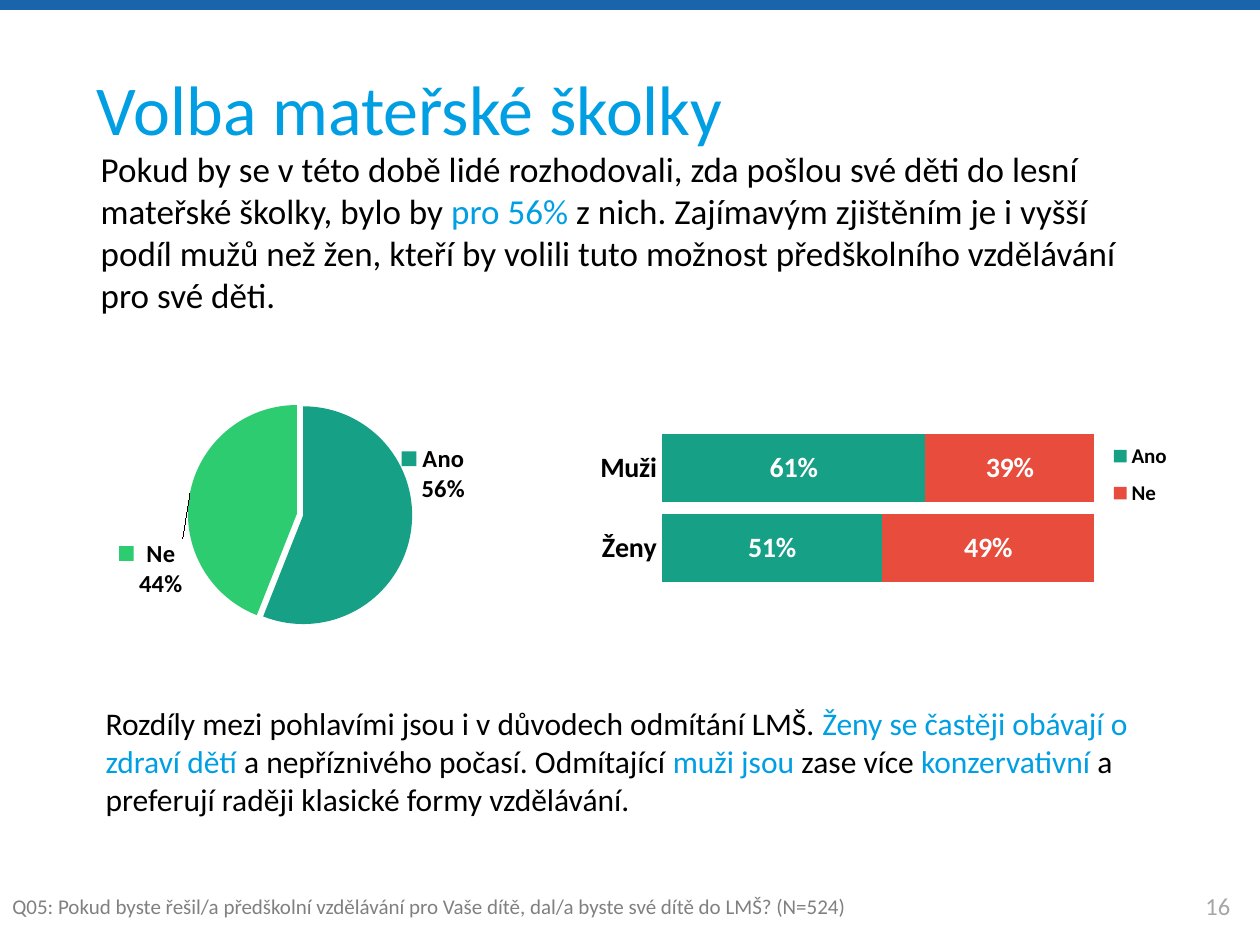
from lxml import etree
from pptx import Presentation
from pptx import util as u
from pptx.chart import data as cd
from pptx.dml.color import RGBColor
from pptx.enum import chart as ce, shapes, text
from pptx.oxml import ns

NAVY = RGBColor(0x19, 0x64, 0xAA)
BLUE = RGBColor(0x00, 0x9F, 0xE3)
BLACK = RGBColor(0x00, 0x00, 0x00)
WHITE = RGBColor(0xFF, 0xFF, 0xFF)
GRAY = RGBColor(0x80, 0x80, 0x80)
PALE = RGBColor(0xA6, 0xA6, 0xA6)
TEAL = RGBColor(0x16, 0xA0, 0x85)
GREEN = RGBColor(0x2E, 0xCC, 0x71)
RED = RGBColor(0xE7, 0x4C, 0x3C)


def sub(node, tag, val=None):
    child = etree.SubElement(node, ns.qn(tag))
    if val is not None:
        child.set("val", str(val))
    return child


def place(node, index, spot, inner=False, edge=True):
    for old in node.findall(ns.qn("c:layout")):
        node.remove(old)
    layout = etree.Element(ns.qn("c:layout"))
    manual = sub(layout, "c:manualLayout")
    if inner:
        sub(manual, "c:layoutTarget", "inner")
    if edge:
        sub(manual, "c:xMode", "edge")
        sub(manual, "c:yMode", "edge")
    for key, val in zip("xywh", spot):
        sub(manual, f"c:{key}", val)
    node.insert(index, layout)


class Deck:
    """Hold the text style and the current slide, and add elements to it."""

    def __init__(self, prs, face):
        self.face = face
        self.slide = prs.slides.add_slide(prs.slide_layouts[5])

    def style(self, font, size, color, bold=False):
        font.name, font.size, font.bold = self.face, u.Pt(size), bold
        font.color.rgb = color

    def title(self, words, box, size):
        head = self.slide.shapes.title
        head.left, head.top, head.width, head.height = map(u.Cm, box)
        frame = head.text_frame
        frame.text = words
        frame.vertical_anchor = text.MSO_ANCHOR.MIDDLE
        para = frame.paragraphs[0]
        para.alignment = text.PP_ALIGN.LEFT
        self.style(para.runs[0].font, size, BLUE)

    def band(self, box, color):
        rect = self.slide.shapes.add_shape(shapes.MSO_SHAPE.RECTANGLE, *map(u.Cm, box))
        rect.shadow.inherit = False
        rect.fill.solid()
        rect.fill.fore_color.rgb = color
        rect.line.fill.background()

    def label(self, words, box, size, color, align=text.PP_ALIGN.LEFT):
        frame = self.slide.shapes.add_textbox(*map(u.Cm, box)).text_frame
        frame.word_wrap = True
        frame.vertical_anchor = text.MSO_ANCHOR.MIDDLE
        frame.text = words
        para = frame.paragraphs[0]
        para.alignment = align
        self.style(para.runs[0].font, size, color)

    def prose(self, parts, box, size):
        """Add a paragraph whose every second part is highlighted."""
        frame = self.slide.shapes.add_textbox(*map(u.Cm, box)).text_frame
        frame.word_wrap = True
        frame.auto_size = text.MSO_AUTO_SIZE.SHAPE_TO_FIT_TEXT
        para = frame.paragraphs[0]
        para.space_after = u.Pt(6)
        for i, part in enumerate(parts):
            run = para.add_run()
            run.text = part
            self.style(run.font, size, BLUE if i % 2 else BLACK)

    def chart(self, kind, cats, rows, box, spot, fmt):
        data = cd.CategoryChartData(number_format=fmt)
        data.categories = cats
        for name, vals in rows:
            data.add_series(name, vals)
        chart = self.slide.shapes.add_chart(kind, *map(u.Cm, box), data).chart
        self.style(chart.font, 18, BLACK)
        chart.has_title = chart.has_legend = False
        place(chart.element.xpath(".//c:plotArea")[0], 0, spot, inner=True)
        return chart

    def bars(self, cats, rows, colors, box, spot, key):
        chart = self.chart(ce.XL_CHART_TYPE.BAR_STACKED_100, cats, rows, box, spot, "0%")
        plot = chart.plots[0]
        plot.gap_width, plot.overlap = 19, 100
        plot.vary_by_categories = False
        for row, color in zip(plot.series, colors):
            row.format.fill.solid()
            row.format.fill.fore_color.rgb = color
            marks = row.data_labels
            marks.show_value = True
            marks.number_format, marks.number_format_is_linked = "0%", False
            self.style(marks.font, 16, WHITE, True)
        axis = chart.category_axis
        axis.major_tick_mark = ce.XL_TICK_MARK.NONE
        axis.format.line.fill.background()
        self.style(axis.tick_labels.font, 16, BLACK, True)
        chart.value_axis.has_major_gridlines = False
        chart.value_axis.visible = False
        chart.has_legend = True
        chart.legend.position = ce.XL_LEGEND_POSITION.RIGHT
        chart.legend.include_in_layout = False
        self.style(chart.legend.font, 12, BLACK, True)
        place(chart.element.xpath(".//c:legend")[0], 1, key)

    def pie(self, cats, rows, colors, box, spot, shifts):
        chart = self.chart(ce.XL_CHART_TYPE.PIE, cats, rows, box, spot, "0")
        plot = chart.plots[0]
        plot.vary_by_categories = True
        row = plot.series[0]
        for i, color in enumerate(colors):
            point = row.points[i]
            point.format.fill.solid()
            point.format.fill.fore_color.rgb = color
            self.style(point.data_label.font, 14, BLACK, True)
            point.data_label.position = ce.XL_LABEL_POSITION.OUTSIDE_END
        blast = etree.Element(ns.qn("c:explosion"), val="3")
        chart.element.xpath(".//c:ser/c:dPt")[0].addprevious(blast)
        shown = {"LegendKey": 1, "Val": 0, "CatName": 1, "SerName": 0, "Percent": 1}
        for mark, shift in zip(chart.element.xpath(".//c:dLbl"), shifts):
            place(mark, 1, shift, edge=False)
            for name, val in shown.items():
                mark.find(ns.qn(f"c:show{name}")).set("val", str(val))
            sub(mark, "c:separator").text = "\n"


def main():
    prs = Presentation()
    prs.slide_width, prs.slide_height = u.Cm(25.4), u.Cm(19.05)
    deck = Deck(prs, "Calibri")
    deck.band((0, 0, 25.4, 0.2), NAVY)
    deck.title("Volba mateřské školky", (1.7, 1.02, 22, 2.31), 40)
    deck.label("16", (23.7, 17.75, 1.7, 1.02), 14, PALE, text.PP_ALIGN.CENTER)
    deck.label("Q05: Pokud byste řešil/a předškolní vzdělávání pro Vaše dítě, "
               "dal/a byste své dítě do LMŠ? (N=524)",
               (0, 17.75, 18.44, 1.02), 12, GRAY)
    deck.prose(["Pokud by se v této době lidé rozhodovali, zda pošlou své děti "
                "do lesní mateřské školky, bylo by ", "pro 56% ",
                "z nich. Zajímavým zjištěním je i vyšší podíl mužů než žen, kteří "
                "by volili tuto možnost předškolního vzdělávání pro své děti."],
               (1.78, 2.84, 21.54, 4.65), 20)
    deck.bars(["Ženy", "Muži"], [("Ano", (0.51, 0.61)), ("Ne", (0.49, 0.39))],
              (TEAL, RED), (11.35, 8.43, 12.45, 3.86),
              (0.16, 0.05, 0.7, 0.84), (0.87, 0.07, 0.13, 0.45))
    deck.pie(["Ano", "Ne"], [("Series 1", (56, 44))], (TEAL, GREEN),
             (2.01, 6.86, 8, 6.96), (0.22, 0.18, 0.57, 0.65),
             ((-0.04, -0.27), (0, 0.31)))
    deck.prose(["Rozdíly mezi pohlavími jsou i v důvodech odmítání LMŠ. ",
                "Ženy se častěji obávají o zdraví dětí ",
                "a nepříznivého počasí. Odmítající ", "muži jsou ",
                "zase více ", "konzervativní ",
                "a preferují raději klasické formy vzdělávání."],
               (1.88, 14.07, 21.74, 2.57), 18)
    prs.save("out.pptx")


if __name__ == "__main__":
    main()
